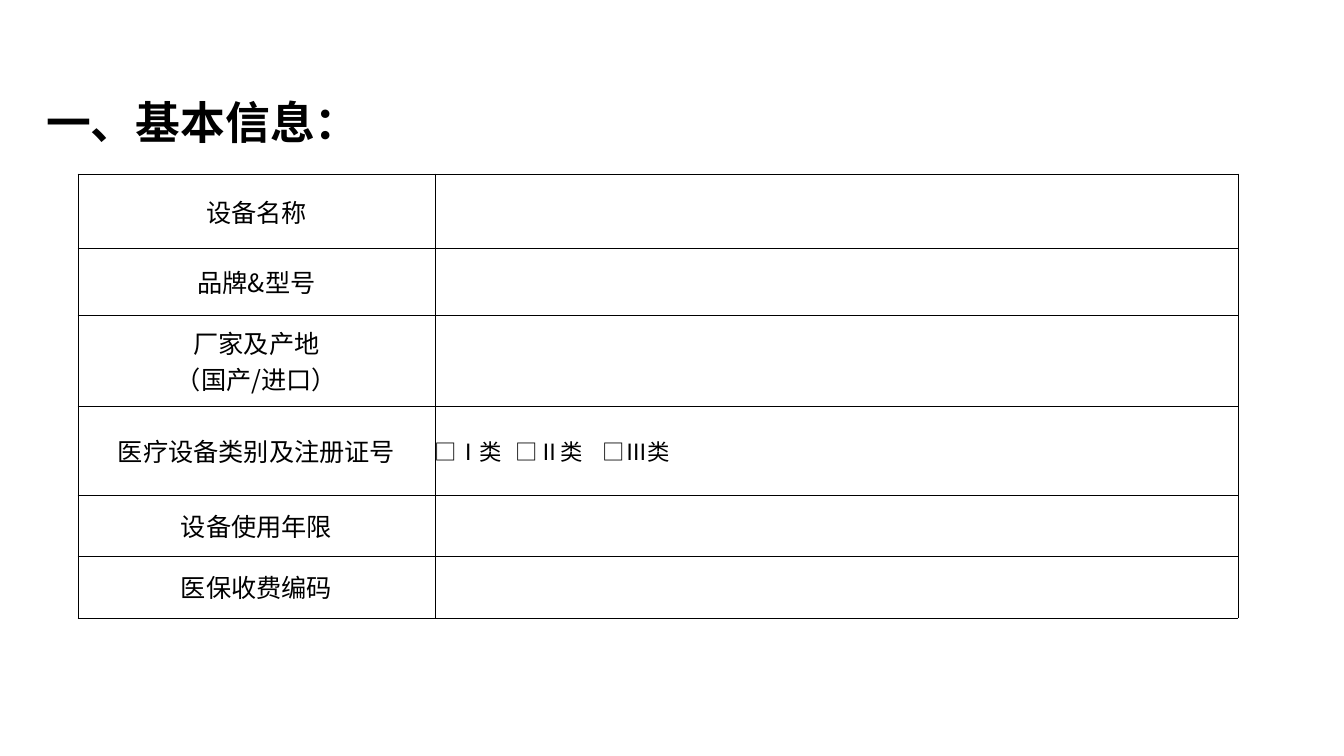
"""Build the basic information form slide for a medical device."""
from lxml.etree import SubElement
from pptx import Presentation
from pptx.dml.color import RGBColor
from pptx.enum.text import MSO_ANCHOR as Anchor, MSO_AUTO_SIZE as AutoSize, PP_ALIGN as Align
from pptx.oxml.ns import qn
from pptx.util import Emu, Pt

TITLE = "一、基本信息："
ROWS = [
    (74, ["设备名称"], []),
    (67, ["品牌&型号"], []),
    (91, ["厂家及产地", "（国产/进口）"], []),
    (89, ["医疗设备类别及注册证号"], ["□Ⅰ类\t□Ⅱ类\t□Ⅲ类"]),
    (61, ["设备使用年限"], []),
    (62, ["医保收费编码"], []),
]
COLUMN_WIDTHS = [357, 803]
TABLE_LEFT, TABLE_TOP = 78, 174
TITLE_BOX = (36, 90, 436, 64)
CHOICE_TABS = [81, 168]
LABEL_MARGIN = 7
COLORS = {"text": "000000", "border": "000000"}
FONT = "Noto Sans CJK SC"


def px(length):
    return Emu(round(length * 914400 / 100.8))


def write_text(frame, lines, size=18, bold=False, align=Align.LEFT, tabs=()):
    for index, line in enumerate(lines):
        paragraph = frame.paragraphs[0] if index == 0 else frame.add_paragraph()
        paragraph.alignment = align
        run = paragraph.add_run()
        run.text = line
        font = run.font
        font.size, font.bold, font.name = Pt(size), bold, FONT
        font.color.rgb = RGBColor.from_string(COLORS["text"])
        SubElement(run._r.get_or_add_rPr(), qn("a:ea"), typeface=FONT)
        if tabs:
            tab_list = SubElement(paragraph._p.get_or_add_pPr(), qn("a:tabLst"))
            for position in tabs:
                SubElement(tab_list, qn("a:tab"), pos=str(px(position)), algn="l")


def format_cell(cell, margin):
    cell.vertical_anchor = Anchor.MIDDLE
    cell.margin_left = cell.margin_right = px(margin)
    cell.margin_top = cell.margin_bottom = 0
    properties = cell._tc.get_or_add_tcPr()
    for side in ("lnL", "lnR", "lnT", "lnB"):
        line = SubElement(properties, qn(f"a:{side}"), w=str(Pt(0.5)))
        fill = SubElement(line, qn("a:solidFill"))
        SubElement(fill, qn("a:srgbClr"), val=COLORS["border"])
    cell.fill.background()


def add_title(slide):
    title = slide.shapes.title
    title.left, title.top, title.width, title.height = map(px, TITLE_BOX)
    frame = title.text_frame
    frame.word_wrap = True
    frame.auto_size = AutoSize.SHAPE_TO_FIT_TEXT
    frame.vertical_anchor = Anchor.TOP
    write_text(frame, [TITLE], size=32, bold=True)


def add_form(slide):
    height = sum(row[0] for row in ROWS)
    table = slide.shapes.add_table(
        len(ROWS), len(COLUMN_WIDTHS), px(TABLE_LEFT), px(TABLE_TOP),
        px(sum(COLUMN_WIDTHS)), px(height)).table
    table.first_row = table.horz_banding = False
    for column, width in zip(table.columns, COLUMN_WIDTHS):
        column.width = px(width)
    for row, (row_height, labels, choices) in zip(table.rows, ROWS):
        row.height = px(row_height)
        label_cell, value_cell = row.cells
        format_cell(label_cell, LABEL_MARGIN)
        format_cell(value_cell, 0)
        write_text(label_cell.text_frame, labels, align=Align.CENTER)
        write_text(value_cell.text_frame, choices, size=16, tabs=CHOICE_TABS)


def main():
    presentation = Presentation()
    presentation.slide_width, presentation.slide_height = px(1344), px(756)
    slide = presentation.slides.add_slide(presentation.slide_layouts[5])
    add_title(slide)
    add_form(slide)
    presentation.save("out.pptx")


if __name__ == "__main__":
    main()
